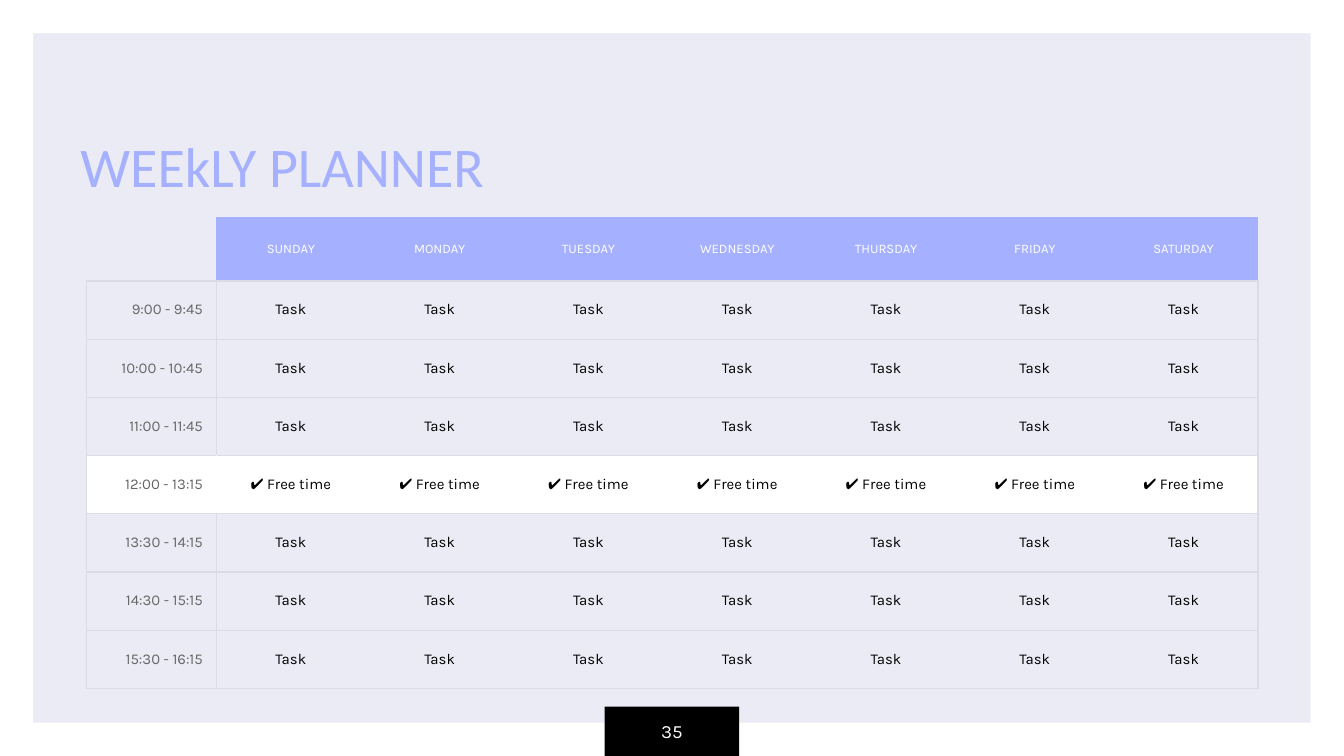
from typing import NamedTuple

import pptx
import pptx.dml.color
import pptx.enum.shapes
import pptx.enum.text
import pptx.oxml
import pptx.oxml.ns
import pptx.util

Pt = pptx.util.Pt
Align = pptx.enum.text.PP_ALIGN
Anchor = pptx.enum.text.MSO_ANCHOR
Form = pptx.enum.shapes.MSO_SHAPE

HUES = {
    "back": "EAEBF4",
    "white": "FFFFFF",
    "black": "000000",
    "lilac": "A5B0FE",
    "grid": "DADBE6",
    "gray": "666666",
}
PAD = Pt(7.2)


class Box(NamedTuple):
    left: float
    top: float
    width: float
    height: float


class Style(NamedTuple):
    size: float
    hue: str
    align: Align
    font: str = "Karla"


class Slot(NamedTuple):
    time: str
    task: str = "Task"
    fill: str = ""


DAYS = ["SUNDAY", "MONDAY", "TUESDAY", "WEDNESDAY", "THURSDAY", "FRIDAY", "SATURDAY"]
SLOTS = [
    Slot("9:00 - 9:45"),
    Slot("10:00 - 10:45"),
    Slot("11:00 - 11:45"),
    Slot("12:00 - 13:15", "✔ Free time", "white"),
    Slot("13:30 - 14:15"),
    Slot("14:30 - 15:15"),
    Slot("15:30 - 16:15"),
]
TITLE = Style(30, "lilac", Align.LEFT, "Calibri")
PAGE = Style(10, "white", Align.CENTER)
DAY = Style(7, "white", Align.CENTER)
TIME = Style(8, "gray", Align.RIGHT)
TASK = Style(8, "black", Align.CENTER)


def color(hue: str) -> pptx.dml.color.RGBColor:
    return pptx.dml.color.RGBColor.from_string(HUES[hue])


def write(frame, text: str, style: Style) -> None:
    line = frame.paragraphs[0]
    line.text = text
    line.alignment = style.align
    line.font.size = Pt(style.size)
    line.font.name = style.font
    line.font.color.rgb = color(style.hue)


def add_label(slide, box: Box, text: str, style: Style, anchor: Anchor) -> None:
    frame = slide.shapes.add_textbox(*map(Pt, box)).text_frame
    frame.word_wrap = True
    frame.vertical_anchor = anchor
    frame.margin_left = frame.margin_right = PAD
    frame.margin_top = frame.margin_bottom = PAD
    write(frame, text, style)


def add_block(slide, form: Form, box: Box, hue: str):
    block = slide.shapes.add_shape(form, *map(Pt, box))
    block.shadow.inherit = False
    block.fill.solid()
    block.fill.fore_color.rgb = color(hue)
    block.line.fill.background()
    return block


def set_edges(cell, edges: dict[str, str]) -> None:
    props = cell._tc.get_or_add_tcPr()
    space = pptx.oxml.ns.nsdecls("a")
    for side in "LRTB":
        hue = edges.get(side)
        paint = f'<a:solidFill><a:srgbClr val="{HUES[hue]}"/></a:solidFill>' if hue else "<a:noFill/>"
        props.append(pptx.oxml.parse_xml(f'<a:ln{side} {space} w="{Pt(0.75)}">{paint}</a:ln{side}>'))


def fill_cell(cell, text: str, style: Style, fill: str, edges: dict[str, str]) -> None:
    cell.vertical_anchor = Anchor.MIDDLE
    cell.margin_left = cell.margin_right = PAD
    cell.margin_top = cell.margin_bottom = PAD if text else 0
    set_edges(cell, edges)
    if fill:
        cell.fill.solid()
        cell.fill.fore_color.rgb = color(fill)
    else:
        cell.fill.background()
    write(cell.text_frame, text, style)


def add_plan(slide, box: Box, first: float, head: float) -> None:
    rows, cols = len(SLOTS) + 1, len(DAYS) + 1
    table = slide.shapes.add_table(rows, cols, *map(Pt, box)).table
    table.first_row = table.horz_banding = False
    for col, column in enumerate(table.columns):
        column.width = Pt((box.width - first) / len(DAYS) if col else first)
    for row, line in enumerate(table.rows):
        line.height = Pt((box.height - head) / len(SLOTS) if row else head)

    for col, day in enumerate(["", *DAYS]):
        fill_cell(table.cell(0, col), day, DAY, "lilac" if day else "", {"B": "grid"})
    for row, slot in enumerate(SLOTS, 1):
        for col in range(cols):
            edges = {"T": "grid", "B": "grid"}
            if col == 0:
                edges |= {"L": "grid", "R": slot.fill or "grid"}
            elif col == 1:
                edges["L"] = slot.fill or "grid"
            elif col == cols - 1:
                edges["R"] = "grid"
            text, style = (slot.task, TASK) if col else (slot.time, TIME)
            fill_cell(table.cell(row, col), text, style, slot.fill, edges)


def main() -> None:
    deck = pptx.Presentation()
    deck.slide_width, deck.slide_height = Pt(720), Pt(405)
    slide = deck.slides.add_slide(deck.slide_layouts[6])
    slide.background.fill.solid()
    slide.background.fill.fore_color.rgb = color("back")

    rim = add_block(slide, Form.FRAME, Box(0, 0, 720, 405), "white")
    rim.adjustments[0] = 0.044
    add_block(slide, Form.RECTANGLE, Box(324, 378.6, 72, 26.4), "black")
    add_label(slide, Box(36, 46, 404.6, 67.7), "WEEkLY PLANNER", TITLE, Anchor.BOTTOM)
    add_label(slide, Box(324, 378.6, 72, 26.4), "35", PAGE, Anchor.MIDDLE)
    add_plan(slide, Box(46.3, 116.2, 627.7, 252.6), 69.7, 34.3)
    deck.save("out.pptx")


if __name__ == "__main__":
    main()
